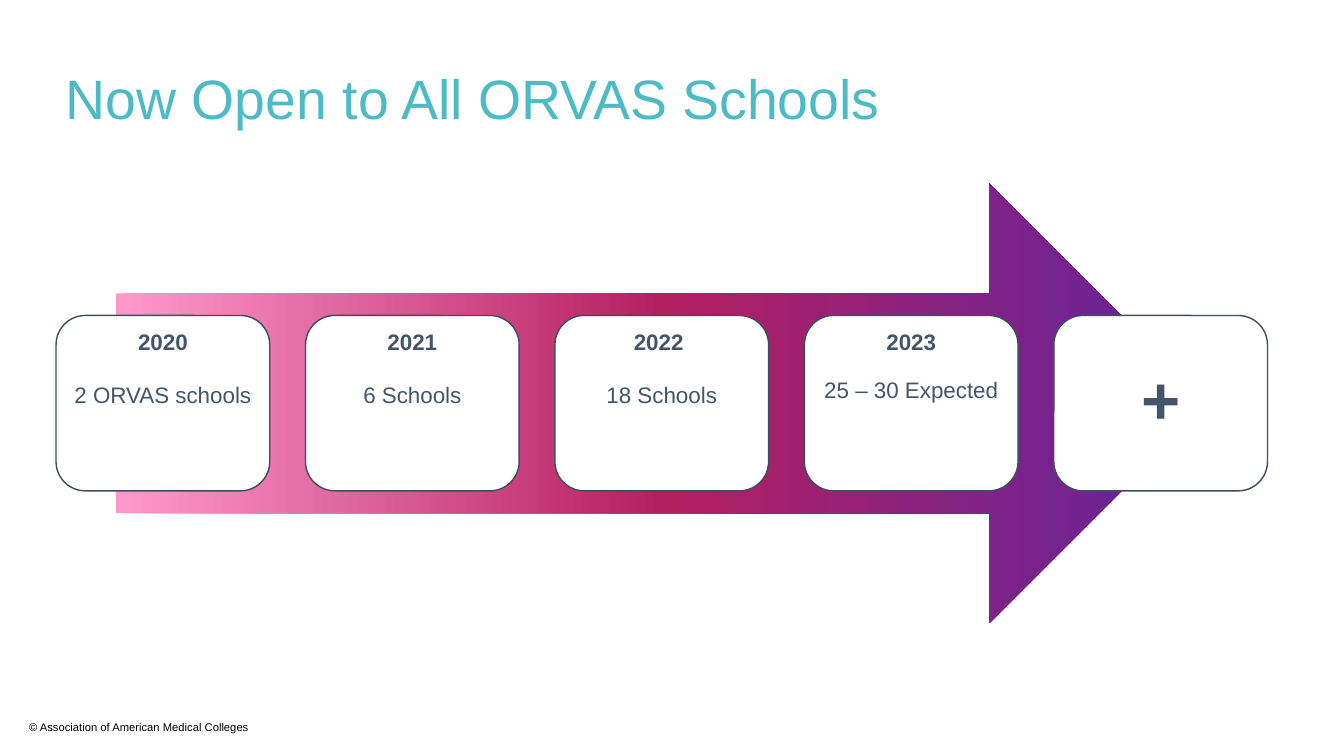
"""Build a one-slide timeline of schools joining, drawn as cards on an arrow."""
from copy import deepcopy
from dataclasses import dataclass

from pptx import Presentation
from pptx.dml.color import RGBColor
from pptx.enum.shapes import MSO_SHAPE
from pptx.enum.text import MSO_ANCHOR, MSO_AUTO_SIZE, PP_ALIGN
from pptx.oxml.ns import qn
from pptx.util import Inches, Pt

WHITE = RGBColor(0xFF, 0xFF, 0xFF)
BLACK = RGBColor(0x00, 0x00, 0x00)
TEAL = RGBColor(0x4D, 0xBB, 0xC6)
SLATE = RGBColor(0x44, 0x54, 0x6A)
OUTLINE = RGBColor(0x3E, 0x4C, 0x60)
PINK = RGBColor(0xFF, 0x99, 0xCC)
CRIMSON = RGBColor(0xB4, 0x1F, 0x60)
PURPLE = RGBColor(0x5F, 0x24, 0x9F)

RIGHT_ARROW = MSO_SHAPE.RIGHT_ARROW
ROUNDED = MSO_SHAPE.ROUNDED_RECTANGLE
LEFT, CENTER = PP_ALIGN.LEFT, PP_ALIGN.CENTER
TOP, MIDDLE = MSO_ANCHOR.TOP, MSO_ANCHOR.MIDDLE
NO_FIT = MSO_AUTO_SIZE.NONE

SLIDE_WIDTH, SLIDE_HEIGHT = Inches(13.33), Inches(7.5)
TITLE_ONLY = 5
FONT = "Arial"
CARD_PITCH = 18.56
CARD_INSET = Inches(0.07)


@dataclass(frozen=True)
class Area:
    """A rectangle in percent of the slide's width and height."""
    left: float
    top: float
    width: float
    height: float

    def lengths(self) -> tuple[int, int, int, int]:
        """Return left, top, width and height as slide lengths."""
        return (int(SLIDE_WIDTH * self.left / 100), int(SLIDE_HEIGHT * self.top / 100),
                int(SLIDE_WIDTH * self.width / 100), int(SLIDE_HEIGHT * self.height / 100))


@dataclass(frozen=True)
class Line:
    """One paragraph of text with its format."""
    text: str
    size: float
    color: RGBColor
    bold: bool = False
    align: PP_ALIGN = LEFT
    spacing: float = 0.9
    after: float = 0


@dataclass(frozen=True)
class Card:
    """The lines shown on one card and their vertical anchor."""
    lines: tuple[Line, ...]
    anchor: MSO_ANCHOR = TOP


def year_card(year: str, schools: str, gap: float = 21) -> Card:
    """Return a card with a bold year above a count of schools."""
    return Card((Line(year, 16, SLATE, True, CENTER, after=gap),
                 Line(schools, 16, SLATE, align=CENTER)))


TITLE_AREA = Area(4.13, 8.93, 91.75, 9.07)
ARROW_AREA = Area(8.63, 24.27, 81.32, 58.13)
FIRST_CARD = Area(4.17, 41.73, 15.9, 23.2)
FOOTER_AREA = Area(1.43, 94.67, 40.28, 3.2)
TITLE = Line("Now Open to All ORVAS Schools", 39.6, TEAL)
FOOTER = Line("© Association of American Medical Colleges", 8, BLACK, spacing=1)
ARROW_STOPS = ((0, PINK), (0.5, CRIMSON), (1, PURPLE))
CARDS = (
    year_card("2020", "2 ORVAS schools"),
    year_card("2021", "6 Schools"),
    year_card("2022 ", "18 Schools"),
    year_card("2023", "25 – 30 Expected", 17),
    Card((Line("+", 48, SLATE, True, CENTER, after=4),), MIDDLE),
)


def set_all(target: object, values: dict) -> None:
    """Set each named attribute of the target."""
    for name, value in values.items():
        setattr(target, name, value)


def write(box, lines: tuple[Line, ...], frame_format: dict) -> None:
    """Write the lines into a box."""
    frame = box.text_frame
    set_all(frame, {"word_wrap": True, "auto_size": NO_FIT, **frame_format})
    for index, line in enumerate(lines):
        para = frame.paragraphs[0] if index == 0 else frame.add_paragraph()
        set_all(para, {"alignment": line.align, "line_spacing": line.spacing,
                       "space_before": Pt(0), "space_after": Pt(line.after)})
        span = para.add_run()
        span.text = line.text
        set_all(span.font, {"name": FONT, "size": Pt(line.size), "bold": line.bold})
        span.font.color.rgb = line.color


def add_title(page) -> None:
    """Place and fill the title placeholder."""
    title = page.shapes.title
    set_all(title, dict(zip(("left", "top", "width", "height"), TITLE_AREA.lengths())))
    write(title, (TITLE,), {"vertical_anchor": MIDDLE})


def add_arrow(page) -> None:
    """Draw the arrow with its three-stop gradient."""
    arrow = page.shapes.add_shape(RIGHT_ARROW, *ARROW_AREA.lengths())
    arrow.shadow.inherit = False
    arrow.line.fill.background()
    arrow.fill.gradient()
    arrow.fill.gradient_angle = 0
    stop_list = next(arrow.element.iter(qn("a:gsLst")))
    stop_list.append(deepcopy(stop_list[0]))
    for stop, (position, color) in zip(arrow.fill.gradient_stops, ARROW_STOPS):
        stop.position = position
        stop.color.rgb = color


def add_card(page, column: int, card: Card) -> None:
    """Draw a card in the given column."""
    area = Area(FIRST_CARD.left + column * CARD_PITCH, FIRST_CARD.top,
                FIRST_CARD.width, FIRST_CARD.height)
    box = page.shapes.add_shape(ROUNDED, *area.lengths())
    box.shadow.inherit = False
    box.fill.solid()
    box.fill.fore_color.rgb = WHITE
    box.line.color.rgb = OUTLINE
    box.line.width = Pt(1)
    insets = {f"margin_{side}": CARD_INSET for side in ("left", "top", "right", "bottom")}
    write(box, card.lines, {"vertical_anchor": card.anchor, **insets})


def main() -> None:
    """Build and save the deck."""
    deck = Presentation()
    set_all(deck, {"slide_width": SLIDE_WIDTH, "slide_height": SLIDE_HEIGHT})
    page = deck.slides.add_slide(deck.slide_layouts[TITLE_ONLY])
    footer = page.shapes.add_textbox(*FOOTER_AREA.lengths())
    write(footer, (FOOTER,), {"vertical_anchor": TOP})
    add_title(page)
    add_arrow(page)
    for column, card in enumerate(CARDS):
        add_card(page, column, card)
    deck.save("out.pptx")


if __name__ == "__main__":
    main()
